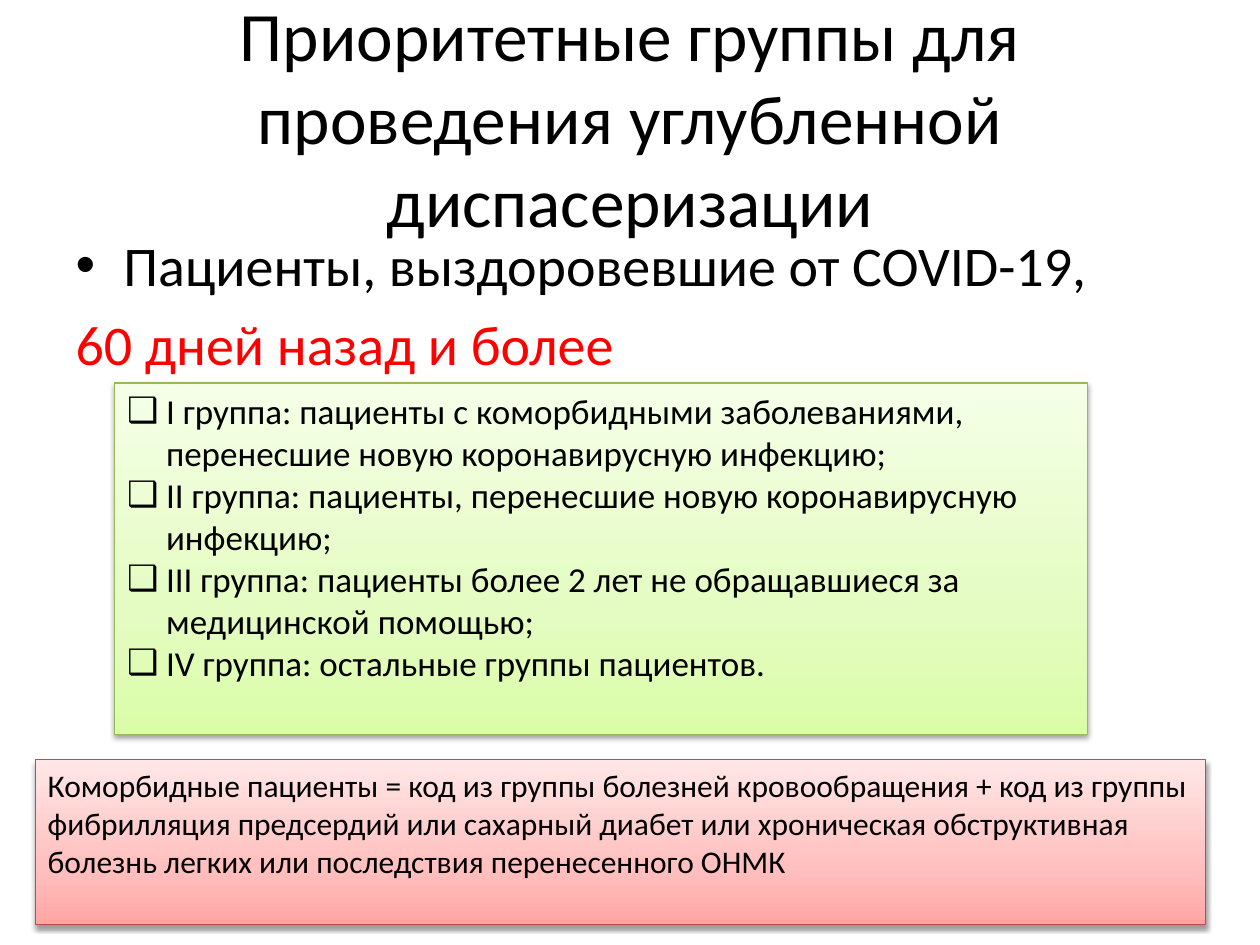
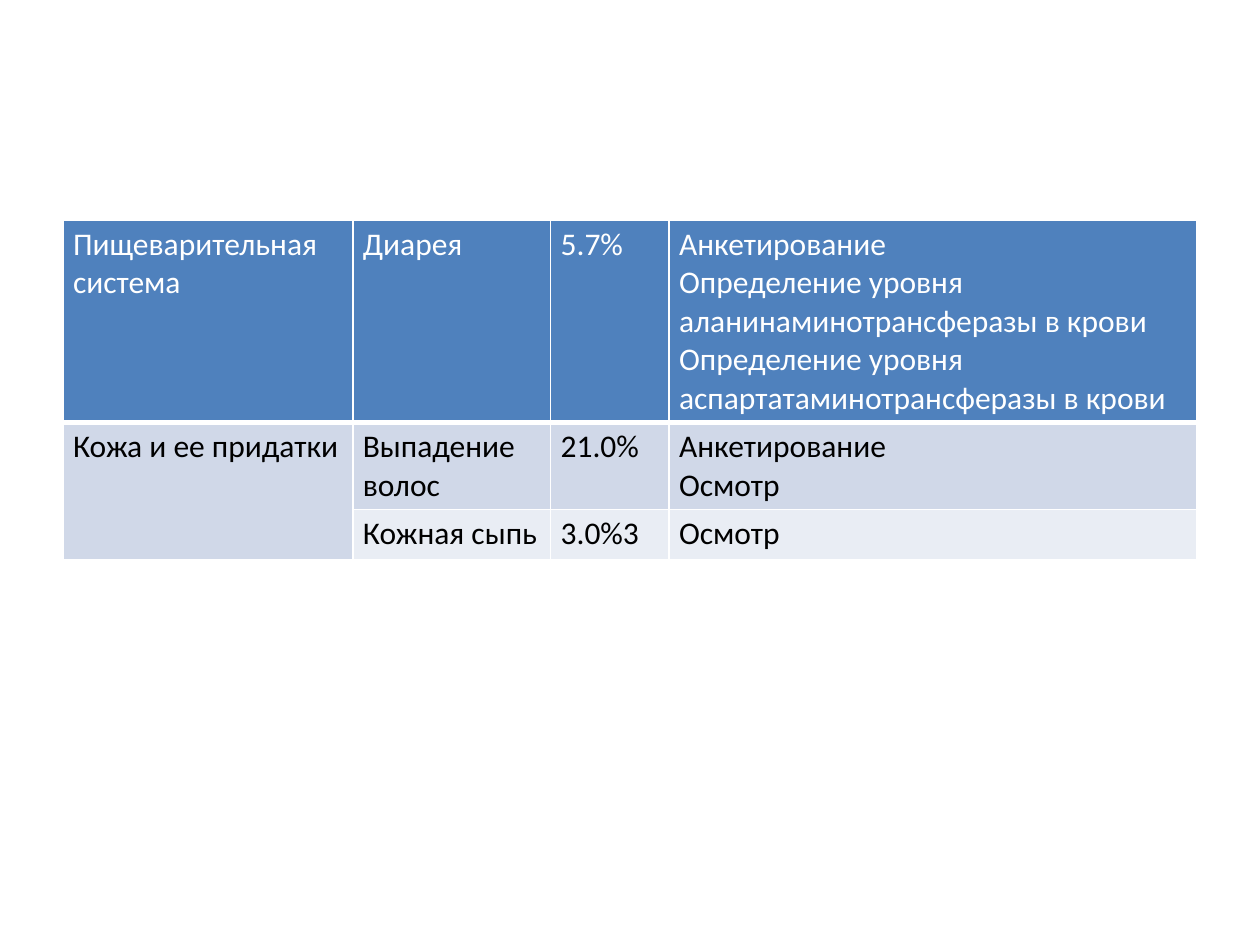
from dataclasses import dataclass

from lxml import etree
from pptx import Presentation
from pptx import util as u
from pptx.dml.color import RGBColor
from pptx.enum import shapes, text
from pptx.oxml.ns import qn


@dataclass(frozen=True)
class Theme:
    font: str = "Calibri"
    ink: str = "000000"
    white: str = "FFFFFF"
    red: str = "FF0000"
    head: str = "4F81BD"
    bands: tuple = ("D0D8E8", "E9EDF4")
    green: tuple = ("DAFDA7", "E4FCC2", "F5FFE7")
    lime: str = "98B955"
    pink: tuple = ("FFA6A5", "FFC0BF", "FFE7E7")
    rose: str = "BF4C48"
    title: float = 39.6
    body: float = 32
    list: float = 20
    note: float = 18


THEME = Theme()


def node(root, tag, **attrs):
    pairs = {key: str(value) for key, value in attrs.items()}
    return etree.SubElement(root, qn(tag), pairs)


def write(para, words, size=THEME.note, color=THEME.ink, align="LEFT", mark=None, indent=None):
    para.text = words
    para.alignment = getattr(text.PP_ALIGN, align)
    for run in para.runs:
        font = run.font
        font.name, font.size, font.bold = THEME.font, u.Pt(size), False
        font.color.rgb = RGBColor.from_string(color)
    if indent is not None:
        props = para._p.get_or_add_pPr()
        props.set("marL", str(u.Inches(indent)))
        props.set("indent", str(-u.Inches(indent)))
        if mark:
            node(props, "a:buFont", typeface="Arial")
            node(props, "a:buChar", char=mark)
        else:
            node(props, "a:buNone")


def fill_in(frame, items, **style):
    frame.word_wrap = True
    frame.auto_size = text.MSO_AUTO_SIZE.NONE
    for num, item in enumerate(items):
        words, extra = item if isinstance(item, tuple) else (item, {})
        para = frame.add_paragraph() if num else frame.paragraphs[0]
        write(para, words, **{**style, **extra})


def place(shape, box):
    shape.left, shape.top, shape.width, shape.height = map(u.Inches, box)


class Deck:
    def __init__(self, theme):
        self.theme = theme
        self.show = Presentation()
        self.show.slide_width, self.show.slide_height = u.Inches(10), u.Inches(7.5)
        self.slide = None

    def page(self, layout):
        self.slide = self.show.slides.add_slide(self.show.slide_layouts[layout])

    def title(self, words, box):
        shape = self.slide.shapes.title
        place(shape, box)
        fill_in(shape.text_frame, [words], size=self.theme.title, align="CENTER")
        shape.text_frame.vertical_anchor = text.MSO_ANCHOR.MIDDLE

    def body(self, items, box):
        shape = self.slide.placeholders[1]
        place(shape, box)
        fill_in(shape.text_frame, items, size=self.theme.body)

    def panel(self, items, box, tones, edge, **style):
        shape = self.slide.shapes.add_shape(shapes.MSO_SHAPE.RECTANGLE, *map(u.Inches, box))
        shape.fill.gradient()
        shape.fill.gradient_angle = 90
        stops = next(shape._element.spPr.iter(qn("a:gsLst")))
        stops.clear()
        for pos, tone in zip((0, 35000, 100000), tones):
            node(node(stops, "a:gs", pos=pos), "a:srgbClr", val=tone)
        shape.line.color.rgb = RGBColor.from_string(edge)
        shape.line.width = u.Pt(0.75)
        shape.shadow.inherit = False
        effects = shape._element.spPr.find(qn("a:effectLst"))
        shade = node(effects, "a:outerShdw", blurRad=u.Pt(3.1), dist=u.Pt(1.6),
                     dir=5400000, rotWithShape=0)
        node(node(shade, "a:srgbClr", val=self.theme.ink), "a:alpha", val=38000)
        fill_in(shape.text_frame, items, **style)
        shape.text_frame.vertical_anchor = text.MSO_ANCHOR.TOP

    def table(self, rows, box, widths, heights, spans=()):
        grid = self.slide.shapes.add_table(len(rows), len(widths), *map(u.Inches, box)).table
        for col, width in zip(grid.columns, widths):
            col.width = u.Inches(width)
        for row, height in zip(grid.rows, heights):
            row.height = u.Inches(height)
        for start, end in spans:
            grid.cell(*start).merge(grid.cell(*end))
        for i, row in enumerate(rows):
            for j, words in enumerate(row):
                self.cell(grid.cell(i, j), words, i)

    def cell(self, cell, words, row):
        theme = self.theme
        cell.margin_left = cell.margin_right = u.Inches(0.08)
        cell.margin_top = cell.margin_bottom = u.Inches(0.04)
        props = cell._tc.get_or_add_tcPr()
        for side in "LRTB":
            thick = (row, side) in ((0, "B"), (1, "T"))
            line = node(props, f"a:ln{side}", w=u.Pt(3 if thick else 1))
            node(node(line, "a:solidFill"), "a:srgbClr", val=theme.white)
        cell.fill.solid()
        tone = theme.bands[(row - 1) % 2] if row else theme.head
        cell.fill.fore_color.rgb = RGBColor.from_string(tone)
        if words:
            write(cell.text_frame.paragraphs[0], words,
                  color=theme.ink if row else theme.white)


def groups(deck):
    theme = deck.theme
    deck.page(1)
    deck.title("Приоритетные группы для проведения углубленной диспасеризации",
               (0.5, 0.3, 9, 1.25))
    deck.body([
        ("Пациенты, выздоровевшие от COVID-19,", {"mark": "•", "indent": 0.38}),
        ("60 дней назад и более", {"color": theme.red, "indent": 0}),
    ], (0.5, 1.78, 9, 4.92))
    deck.panel([
        "I группа: пациенты с коморбидными заболеваниями, перенесшие новую коронавирусную инфекцию;",
        "II группа: пациенты, перенесшие новую коронавирусную инфекцию;",
        "III группа: пациенты более 2 лет не обращавшиеся за медицинской помощью;",
        "IV группа: остальные группы пациентов.",
    ], (0.91, 3.04, 7.72, 2.79), theme.green, theme.lime,
        size=theme.list, mark="❑", indent=0.31)
    deck.panel([
        "Коморбидные пациенты = код из группы болезней кровообращения + код из группы "
        "фибрилляция предсердий или сахарный диабет или хроническая обструктивная "
        "болезнь легких или последствия перенесенного ОНМК",
    ], (0.28, 6.03, 9.29, 1.31), theme.pink, theme.rose)


def checks(deck):
    deck.page(6)
    deck.table([
        ("Пищеварительная система", "Диарея", "5.7%",
         "Анкетирование\nОпределение уровня аланинаминотрансферазы в крови "
         "Определение уровня аспартатаминотрансферазы в крови"),
        ("Кожа и ее придатки", "Выпадение волос", "21.0%", "Анкетирование\nОсмотр"),
        ("", "Кожная сыпь", "3.0%3", "Осмотр"),
    ], (0.5, 1.75, 9, 2.67), (2.3, 1.57, 0.94, 4.19), (1.59, 0.68, 0.4),
        spans=[((1, 0), (2, 0))])


def main():
    deck = Deck(THEME)
    groups(deck)
    checks(deck)
    deck.show.save("out.pptx")


if __name__ == "__main__":
    main()
